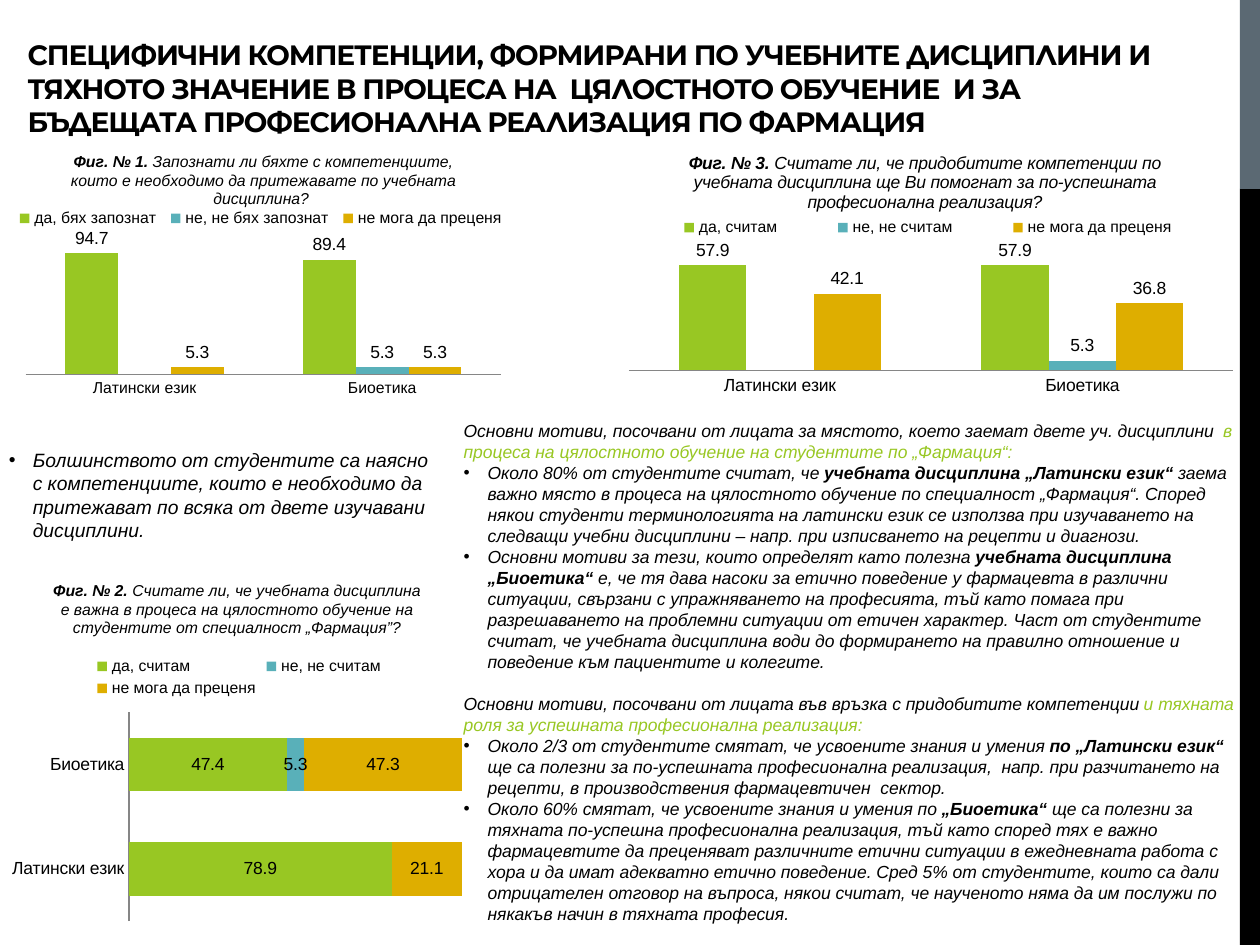
from lxml import etree
from pptx import Presentation
from pptx.chart.data import CategoryChartData
from pptx.dml.color import RGBColor
from pptx.enum.chart import XL_CHART_TYPE, XL_LABEL_POSITION, XL_LEGEND_POSITION, XL_TICK_MARK
from pptx.enum.lang import MSO_LANGUAGE_ID
from pptx.enum.shapes import MSO_SHAPE
from pptx.enum.text import MSO_ANCHOR, MSO_AUTO_SIZE, PP_ALIGN
from pptx.oxml import parse_xml
from pptx.oxml.ns import nsdecls, qn
from pptx.util import Inches, Pt

BLACK = RGBColor(0x00, 0x00, 0x00)
SLATE = RGBColor(0x5B, 0x69, 0x73)
GREY = RGBColor(0x86, 0x86, 0x86)
GREEN = RGBColor(0x98, 0xC7, 0x23)
TEAL = RGBColor(0x59, 0xB0, 0xB9)
GOLD = RGBColor(0xDE, 0xAE, 0x00)

TITLE = ("СПЕЦИФИЧНИ КОМПЕТЕНЦИИ, ФОРМИРАНИ ПО УЧЕБНИТЕ ДИСЦИПЛИНИ И ТЯХНОТО ЗНАЧЕНИЕ "
         "В ПРОЦЕСА НА  ЦЯЛОСТНОТО ОБУЧЕНИЕ  И ЗА БЪДЕЩАТА ПРОФЕСИОНАЛНА РЕАЛИЗАЦИЯ ПО ФАРМАЦИЯ")

# Paragraphs: (kind, runs); run styles: "" plain, "b" bold, "g" green
FINDING = [("bullet", [("Болшинството от студентите са наясно с компетенциите, които е необходимо да "
                        "притежават по всяка от двете изучавани дисциплини.", "")])]
MOTIVES = [
    ("head", [("Основни мотиви, посочвани от лицата за мястото, което заемат двете уч. дисциплини  ", ""),
              ("в процеса на цялостното обучение на студентите по „Фармация“:", "g")]),
    ("bullet", [("Около 80% от студентите считат, че ", ""),
                ("учебната дисциплина „Латински език“ ", "b"),
                ("заема важно място в процеса на цялостното обучение по специалност „Фармация“. "
                 "Според някои студенти терминологията на латински език се използва при изучаването "
                 "на следващи учебни дисциплини – напр. при изписването на рецепти и диагнози.", "")]),
    ("bullet", [("Основни мотиви за тези, които определят като полезна ", ""),
                ("учебната дисциплина „Биоетика“ ", "b"),
                ("е, че тя дава насоки за етично поведение у фармацевта в различни ситуации, "
                 "свързани с упражняването на професията, тъй като помага при разрешаването на "
                 "проблемни ситуации от етичен характер. Част от студентите считат, че учебната "
                 "дисциплина води до формирането на правилно отношение и поведение към пациентите "
                 "и колегите.", "")]),
    ("head", [("Основни мотиви, посочвани от лицата във връзка с придобитите компетенции ", ""),
              ("и тяхната роля за успешната професионална реализация:", "g")]),
    ("bullet", [("Около 2/3 от студентите смятат, че усвоените знания и умения ", ""),
                ("по „Латински език“", "b"),
                (" ще са полезни за по-успешната професионална реализация,  напр. при разчитането "
                 "на рецепти, в производствения фармацевтичен  сектор.", "")]),
    ("bullet", [("Около 60% смятат, че усвоените знания и умения по ", ""),
                ("„Биоетика“", "b"),
                (" ще са полезни за тяхната по-успешна професионална реализация, тъй като според тях "
                 "е важно фармацевтите да преценяват различните етични ситуации в ежедневната работа "
                 "с хора и да имат адекватно етично поведение. Сред 5% от студентите, които са дали "
                 "отрицателен отговор на въпроса, някои считат, че наученото няма да им послужи по "
                 "някакъв начин в тяхната професия.", "")]),
]

SUBJECTS = ["Латински език", "Биоетика"]
THINK = ["да, считам", "не, не считам", "не мога да преценя"]
COLUMN, BAR = XL_CHART_TYPE.COLUMN_CLUSTERED, XL_CHART_TYPE.BAR_STACKED_100
# plot and legend are shares of the chart: left, top, width, height
CHARTS = [
    dict(box=(0.04, 1.07, 4.1, 2.21), kind=COLUMN, gap=150, top=100, title_size=9, cat_size=9,
         title=("Фиг. № 1. ", "Запознати ли бяхте с компетенциите, които е необходимо да "
                              "притежавате по учебната дисциплина? "),
         names=["да, бях запознат", "не, не бях запознат", "не мога да преценя"],
         values=[(94.7, 89.4), (None, 5.3), (5.3, 5.3)],
         plot=(0.04, 0.4, 0.92, 0.46), legend=(0.01, 0.26, 0.97, 0.08)),
    dict(box=(0.02, 4.46, 3.72, 2.91), kind=BAR, gap=95, top=1, title_size=9, cat_size=10,
         title=("Фиг. № 2. ", "Считате ли, че учебната дисциплина е важна в процеса на цялостното "
                              "обучение на студентите от специалност „Фармация”?"),
         names=THINK, values=[(78.9, 47.4), (None, 5.3), (21.1, 47.3)],
         plot=(0.27, 0.41, 0.71, 0.57), legend=(0.19, 0.25, 0.63, 0.13)),
    dict(box=(4.84, 1.07, 5, 2.2), kind=COLUMN, gap=150, top=70, title_size=10, cat_size=10,
         title=("Фиг. № 3. ", "Считате ли, че придобитите компетенции по учебната дисциплина ще Ви "
                              "помогнат за по-успешната професионална реализация?"),
         names=THINK, values=[(57.9, 57.9), (None, 5.3), (42.1, 36.8)],
         plot=(0.03, 0.39, 0.96, 0.46), legend=(0.03, 0.29, 0.95, 0.09)),
]


def place(shape, left, top, width, height):
    shape.left, shape.top = Inches(left), Inches(top)
    shape.width, shape.height = Inches(width), Inches(height)


def add_run(p, text, size, color=BLACK, bold=False, italic=True, font="Arial"):
    r = p.add_run()
    r.text = text
    r.font.name, r.font.size = font, Pt(size)
    r.font.bold, r.font.italic = bold, italic
    r.font.color.rgb = color
    r.font.language_id = MSO_LANGUAGE_ID.BULGARIAN
    return r


def fill_body(shape, paragraphs, size):
    tf = shape.text_frame
    tf.auto_size, tf.word_wrap = MSO_AUTO_SIZE.NONE, True
    for i, (kind, runs) in enumerate(paragraphs):
        p = tf.paragraphs[0] if i == 0 else tf.add_paragraph()
        bullet = kind == "bullet"
        pPr = p._p.get_or_add_pPr()
        pPr.set("marL", str(Inches(0.19 if bullet else 0)))
        pPr.set("indent", str(Inches(-0.19 if bullet else 0)))
        p.line_spacing = 1.0
        p.space_before = Pt(12 if i and not bullet else 0)
        p.space_after = Pt(0)
        if bullet:
            etree.SubElement(pPr, qn("a:buFont")).set("typeface", "Arial")
            etree.SubElement(pPr, qn("a:buChar")).set("char", "•")
        else:
            etree.SubElement(pPr, qn("a:buNone"))
        for text, style in runs:
            add_run(p, text, size, GREEN if style == "g" else BLACK, style == "b")


def set_layout(element, shares, inner=False):
    """Fix a plot area or legend at shares of the chart's size."""
    for old in element.findall(qn("c:layout")):
        element.remove(old)
    target = '<c:layoutTarget val="inner"/>' if inner else ""
    modes = '<c:xMode val="edge"/><c:yMode val="edge"/>'
    sizes = "".join(f'<c:{k} val="{v}"/>' for k, v in zip("xywh", shares))
    layout = parse_xml(f'<c:layout {nsdecls("c")}><c:manualLayout>{target}{modes}{sizes}'
                       '</c:manualLayout></c:layout>')
    if inner:
        element.insert(0, layout)
    else:
        element.find(qn("c:legendPos")).addnext(layout)


def add_survey_chart(slide, survey):
    data = CategoryChartData(number_format="0.0")
    data.categories = SUBJECTS
    for name, values in zip(survey["names"], survey["values"]):
        data.add_series(name, values)
    box = [Inches(v) for v in survey["box"]]
    chart = slide.shapes.add_chart(survey["kind"], *box, data).chart
    chart.font.name, chart.font.size, chart.font.color.rgb = "Arial", Pt(10), BLACK

    p = chart.chart_title.text_frame.paragraphs[0]
    for text, bold in zip(survey["title"], (True, False)):
        add_run(p, text, survey["title_size"], bold=bold)
    chart.chart_title.include_in_layout = False

    chart.has_legend = True
    chart.legend.position = XL_LEGEND_POSITION.TOP
    chart.legend.include_in_layout = False
    chart.legend.font.size = Pt(9)
    set_layout(chart.legend._element, survey["legend"])
    set_layout(chart._chartSpace.chart.plotArea, survey["plot"], inner=True)

    cat, val = chart.category_axis, chart.value_axis
    cat.major_tick_mark = cat.minor_tick_mark = XL_TICK_MARK.NONE
    cat.tick_labels.font.size = Pt(survey["cat_size"])
    cat.format.line.color.rgb = GREY
    val.has_major_gridlines = val.visible = False
    val.minimum_scale, val.maximum_scale = 0, survey["top"]

    plot = chart.plots[0]
    plot.vary_by_categories = False
    plot.gap_width = survey["gap"]
    plot.overlap = 100 if survey["kind"] == BAR else 0
    for series, color in zip(plot.series, (GREEN, TEAL, GOLD)):
        series.format.fill.solid()
        series.format.fill.fore_color.rgb = color
        labels = series.data_labels
        labels.show_value = True
        labels.number_format, labels.number_format_is_linked = "0.0", False
        labels.position = (XL_LABEL_POSITION.CENTER if survey["kind"] == BAR
                           else XL_LABEL_POSITION.OUTSIDE_END)


prs = Presentation()
prs.slide_width, prs.slide_height = Inches(10), Inches(7.5)
slide = prs.slides.add_slide(prs.slide_layouts[3])

for top, height, color in ((0, 1.5, SLATE), (1.5, 6, BLACK)):
    band = slide.shapes.add_shape(MSO_SHAPE.RECTANGLE, Inches(9.84), Inches(top),
                                  Inches(0.16), Inches(height))
    band.shadow.inherit = False
    band.fill.solid()
    band.fill.fore_color.rgb = color
    band.line.fill.background()
    slide.shapes._spTree.insert(2, band._element)

title, finding, motives = slide.placeholders
place(title, 0.12, 0.13, 9.45, 1.02)
tf = title.text_frame
tf.auto_size, tf.word_wrap, tf.vertical_anchor = MSO_AUTO_SIZE.NONE, True, MSO_ANCHOR.BOTTOM
tf.paragraphs[0].alignment = PP_ALIGN.LEFT
heading = add_run(tf.paragraphs[0], TITLE, 16, bold=True, italic=False, font="Montserrat")
heading._r.get_or_add_rPr().set("spc", "-60")

place(finding, -0.03, 3.51, 3.61, 0.87)
fill_body(finding, FINDING, 11)
place(motives, 3.58, 3.28, 6.42, 4.22)
fill_body(motives, MOTIVES, 10)

for survey in CHARTS:
    add_survey_chart(slide, survey)

prs.save("out.pptx")
